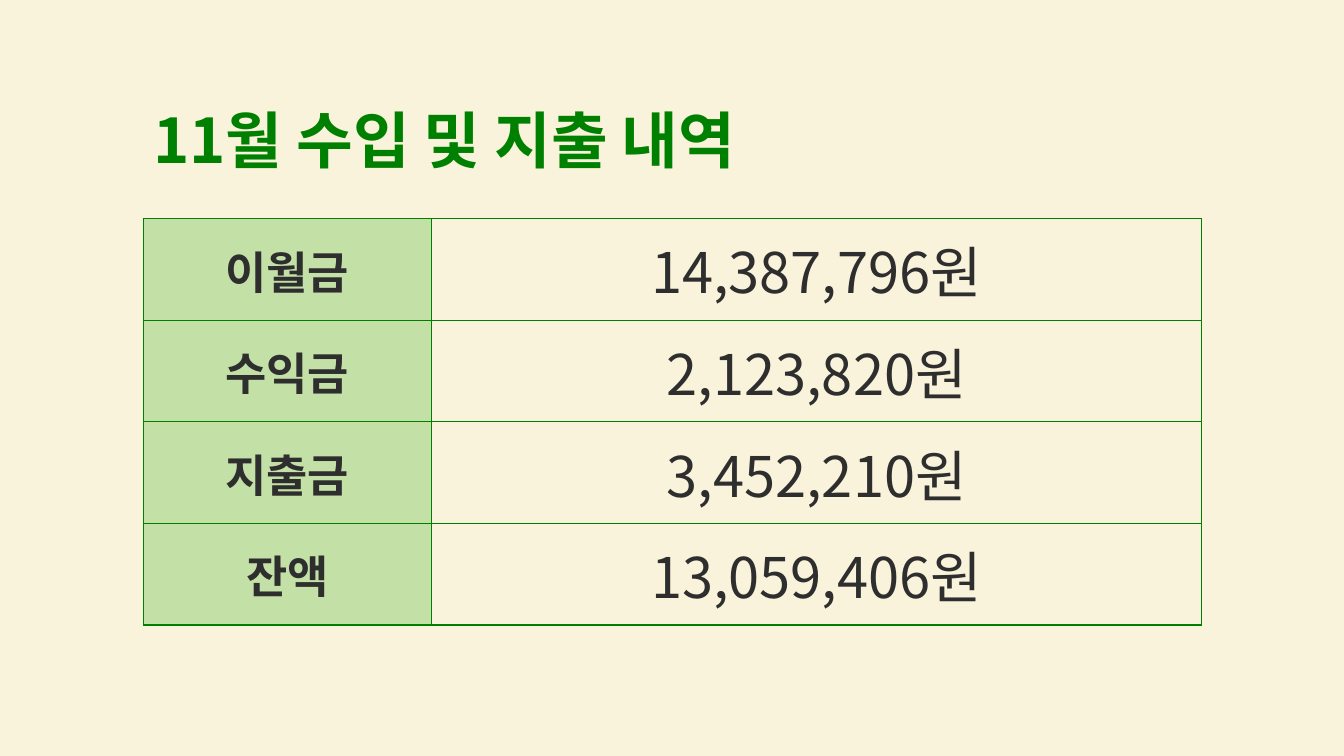
from lxml import etree
from pptx import Presentation
from pptx.dml.color import RGBColor
from pptx.enum.text import MSO_ANCHOR, PP_ALIGN
from pptx.oxml.ns import qn
from pptx.util import Inches, Pt

CENTER = PP_ALIGN.CENTER
MIDDLE = MSO_ANCHOR.MIDDLE
BOTTOM = MSO_ANCHOR.BOTTOM

FONT = "Noto Sans CJK KR"
CREAM, GREEN, LIGHT_GREEN, INK = "FAF3DB", "008000", "C3E0A6", "2D2E2D"

TITLE = "11월 수입 및 지출 내역"
ACCOUNTS = [
    ("이월금", "14,387,796원"),
    ("수익금", "2,123,820원"),
    ("지출금", "3,452,210원"),
    ("잔액", "13,059,406원"),
]
LABEL_WIDTH = 2.86


def color(value):
    return RGBColor.from_string(value)


def format_text(para, size, text_color, bold):
    for span in para.runs:
        span.font.size = Pt(size)
        span.font.bold = bold
        span.font.name = FONT
        span.font.color.rgb = color(text_color)
        east_asian = etree.SubElement(span.font._element, qn("a:ea"))
        east_asian.set("typeface", FONT)


def add_borders(cell, line_color, width):
    properties = cell._tc.get_or_add_tcPr()
    for position, side in enumerate(("lnL", "lnR", "lnT", "lnB")):
        line = etree.Element(qn(f"a:{side}"), w=str(Pt(width)))
        fill = etree.SubElement(line, qn("a:solidFill"))
        etree.SubElement(fill, qn("a:srgbClr"), val=line_color)
        properties.insert(position, line)


def add_title(page, left, top, width, height):
    box = page.shapes.add_textbox(Inches(left), Inches(top), Inches(width), Inches(height))
    frame = box.text_frame
    frame.word_wrap = True
    frame.vertical_anchor = BOTTOM
    frame.text = TITLE
    para = frame.paragraphs[0]
    para.line_spacing = 0.9
    format_text(para, 44, GREEN, True)


def fill_cell(cell, text, size, bold):
    cell.text = text
    cell.vertical_anchor = MIDDLE
    para = cell.text_frame.paragraphs[0]
    para.alignment = CENTER
    format_text(para, size, INK, bold)
    add_borders(cell, GREEN, 1)


def add_accounts(page, left, top, width, height):
    frame = page.shapes.add_table(
        len(ACCOUNTS), 2, Inches(left), Inches(top), Inches(width), Inches(height)
    )
    table = frame.table
    table.first_row = False
    table.horz_banding = False
    table.columns[0].width = Inches(LABEL_WIDTH)
    table.columns[1].width = Inches(width - LABEL_WIDTH)
    for row, (label, amount) in enumerate(ACCOUNTS):
        label_cell, amount_cell = table.cell(row, 0), table.cell(row, 1)
        fill_cell(label_cell, label, 32, True)
        label_cell.fill.solid()
        label_cell.fill.fore_color.rgb = color(LIGHT_GREEN)
        fill_cell(amount_cell, amount, 40, False)
        amount_cell.fill.background()


def main():
    deck = Presentation()
    deck.slide_width = Inches(13.33)
    deck.slide_height = Inches(7.5)
    page = deck.slides.add_slide(deck.slide_layouts[6])
    page.background.fill.solid()
    page.background.fill.fore_color.rgb = color(CREAM)
    add_title(page, 1.42, 0.55, 10.5, 1.25)
    add_accounts(page, 1.42, 2.17, 10.5, 4.03)
    deck.save("out.pptx")


if __name__ == "__main__":
    main()
